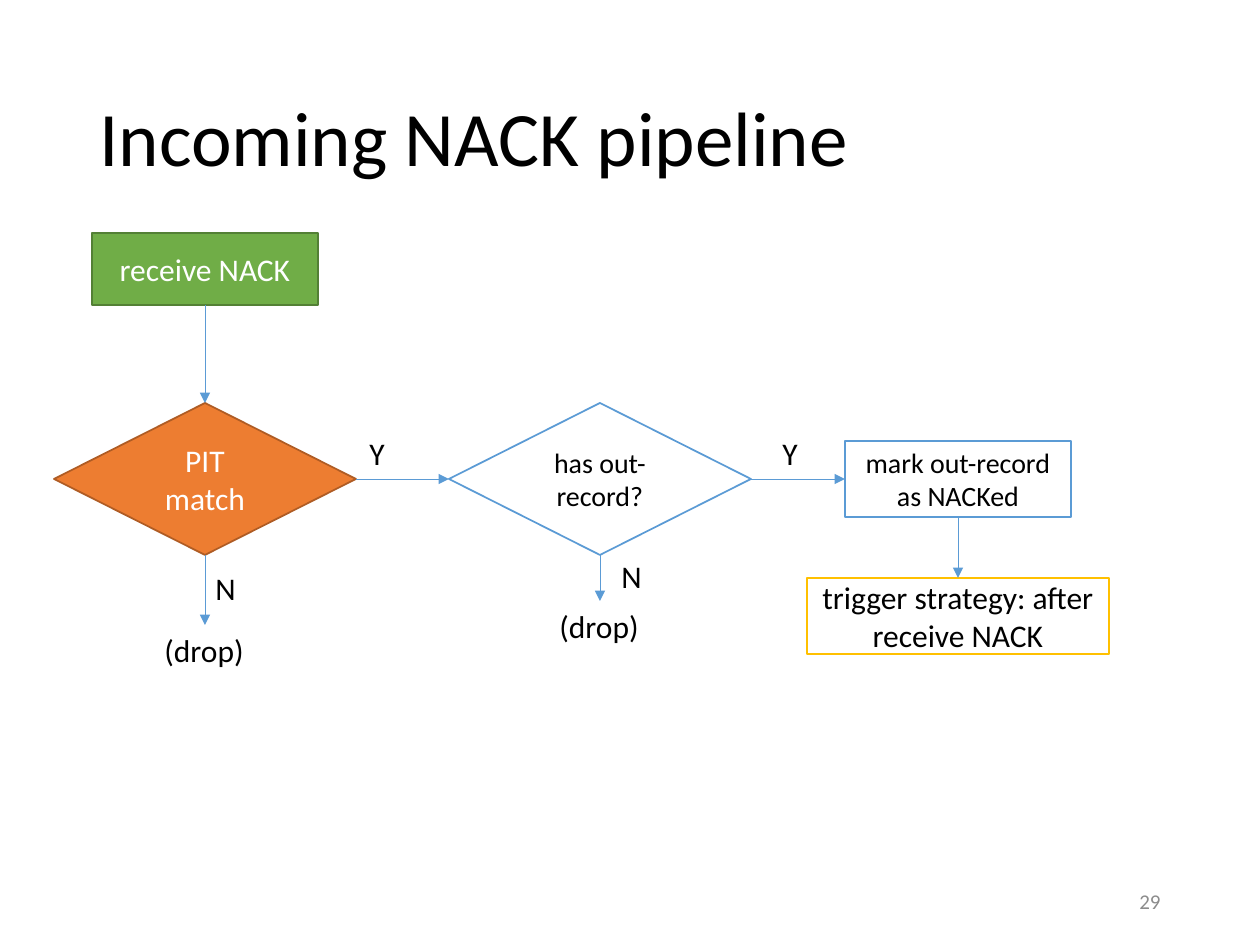
import pptx
import pptx.dml.color
import pptx.enum.shapes
import pptx.enum.text
import pptx.oxml.ns
import pptx.util
from lxml import etree

EMU_PER_PX = 914400 / 126
FONT = "Calibri"
COLORS = {
    "black": "000000",
    "white": "FFFFFF",
    "gray": "8C8C8C",
    "blue": "5B9BD5",
    "green": "70AD47",
    "dark green": "538035",
    "orange": "ED7D31",
    "dark orange": "AF5C24",
    "gold": "FFC000",
}
PROCESS = pptx.enum.shapes.MSO_SHAPE.RECTANGLE
DECISION = pptx.enum.shapes.MSO_SHAPE.FLOWCHART_DECISION
ALIGN = pptx.enum.text.PP_ALIGN
MIDDLE = pptx.enum.text.MSO_ANCHOR.MIDDLE
TOP, LEFT, BOTTOM, RIGHT = range(4)  # connection sites


def px(*lengths):
    return [pptx.util.Emu(round(length * EMU_PER_PX)) for length in lengths]


def rgb(name):
    return pptx.dml.color.RGBColor.from_string(COLORS[name])


def write(shape, text, size, color, align):
    paragraph = shape.text_frame.paragraphs[0]
    paragraph.text = text
    paragraph.alignment = align
    paragraph.font.name = FONT
    paragraph.font.size = pptx.util.Pt(size)
    paragraph.font.color.rgb = rgb(color)
    return paragraph


def add_text(slide, text, box, size, color="black", align=ALIGN.LEFT):
    """Add wrapped, vertically centred text in a (left, top, width, height) box."""
    textbox = slide.shapes.add_textbox(*px(*box))
    textbox.text_frame.word_wrap = True
    textbox.text_frame.vertical_anchor = MIDDLE
    return write(textbox, text, size, color, align)


def add_label(slide, text, center, width):
    x, y = center
    height = 50
    label = slide.shapes.add_textbox(*px(x - width / 2, y - height / 2, width, height))
    label.text_frame.word_wrap = False
    label.text_frame.auto_size = pptx.enum.text.MSO_AUTO_SIZE.SHAPE_TO_FIT_TEXT
    write(label, text, 18, "black", ALIGN.LEFT)
    return label


def add_step(slide, kind, text, center, size, fill="white", line="blue",
             color="black", points=18):
    """Add a flowchart step around its center."""
    (x, y), (width, height) = center, size
    step = slide.shapes.add_shape(
        kind, *px(x - width / 2, y - height / 2, width, height))
    step.shadow.inherit = False
    step.fill.solid()
    step.fill.fore_color.rgb = rgb(fill)
    step.line.color.rgb = rgb(line)
    step.line.width = pptx.util.Pt(1)
    step.text_frame.word_wrap = True
    step.text_frame.vertical_anchor = MIDDLE
    write(step, text, points, color, ALIGN.CENTER)
    return step


def add_arrow(slide, source, source_site, target, target_site):
    arrow = slide.shapes.add_connector(
        pptx.enum.shapes.MSO_CONNECTOR.STRAIGHT, 0, 0, 0, 0)
    arrow.begin_connect(source, source_site)
    arrow.end_connect(target, target_site)
    arrow.line.color.rgb = rgb("blue")
    arrow.line.width = pptx.util.Pt(0.5)
    qn = pptx.oxml.ns.qn
    etree.SubElement(arrow.line._get_or_add_ln(), qn("a:tailEnd"), type="triangle")
    etree.SubElement(arrow._element.spPr, qn("a:effectLst"))


def main():
    presentation = pptx.Presentation()
    presentation.slide_width, presentation.slide_height = px(1260, 945)
    slide = presentation.slides.add_slide(presentation.slide_layouts[6])

    title = add_text(slide, "Incoming NACK pipeline", (87, 50, 1086, 183), 44)
    title.line_spacing = 0.9

    pit_x, record_x, mark_x = 205, 600, 958
    row_y = 479
    decision_size = (302, 152)

    receive = add_step(slide, PROCESS, "receive NACK", (pit_x, 269), (226, 72),
                       "green", "dark green", "white")
    pit_match = add_step(slide, DECISION, "PIT match", (pit_x, row_y), decision_size,
                         "orange", "dark orange", "white")
    out_record = add_step(slide, DECISION, "has out-record?", (record_x, row_y),
                          decision_size, points=16)
    mark = add_step(slide, PROCESS, "mark out-record as NACKed", (mark_x, row_y),
                    (226, 76), points=16)
    trigger = add_step(slide, PROCESS, "trigger strategy: after receive NACK",
                       (mark_x, 616), (302, 76), line="gold")
    pit_drop = add_label(slide, "(drop)", (pit_x, 650), 106)
    record_drop = add_label(slide, "(drop)", (record_x, 626), 106)

    for text, center, width in (
        ("Y", (377, 453), 40),
        ("Y", (790, 453), 40),
        ("N", (226, 588), 46),
        ("N", (632, 576), 46),
    ):
        add_label(slide, text, center, width)

    for source, target in (
        (receive, pit_match),
        (pit_match, pit_drop),
        (out_record, record_drop),
        (mark, trigger),
    ):
        add_arrow(slide, source, BOTTOM, target, TOP)
    for source, target in ((pit_match, out_record), (out_record, mark)):
        add_arrow(slide, source, RIGHT, target, LEFT)

    add_text(slide, "29", (890, 876, 283, 50), 12, "gray", ALIGN.RIGHT)
    presentation.save("out.pptx")


if __name__ == "__main__":
    main()
